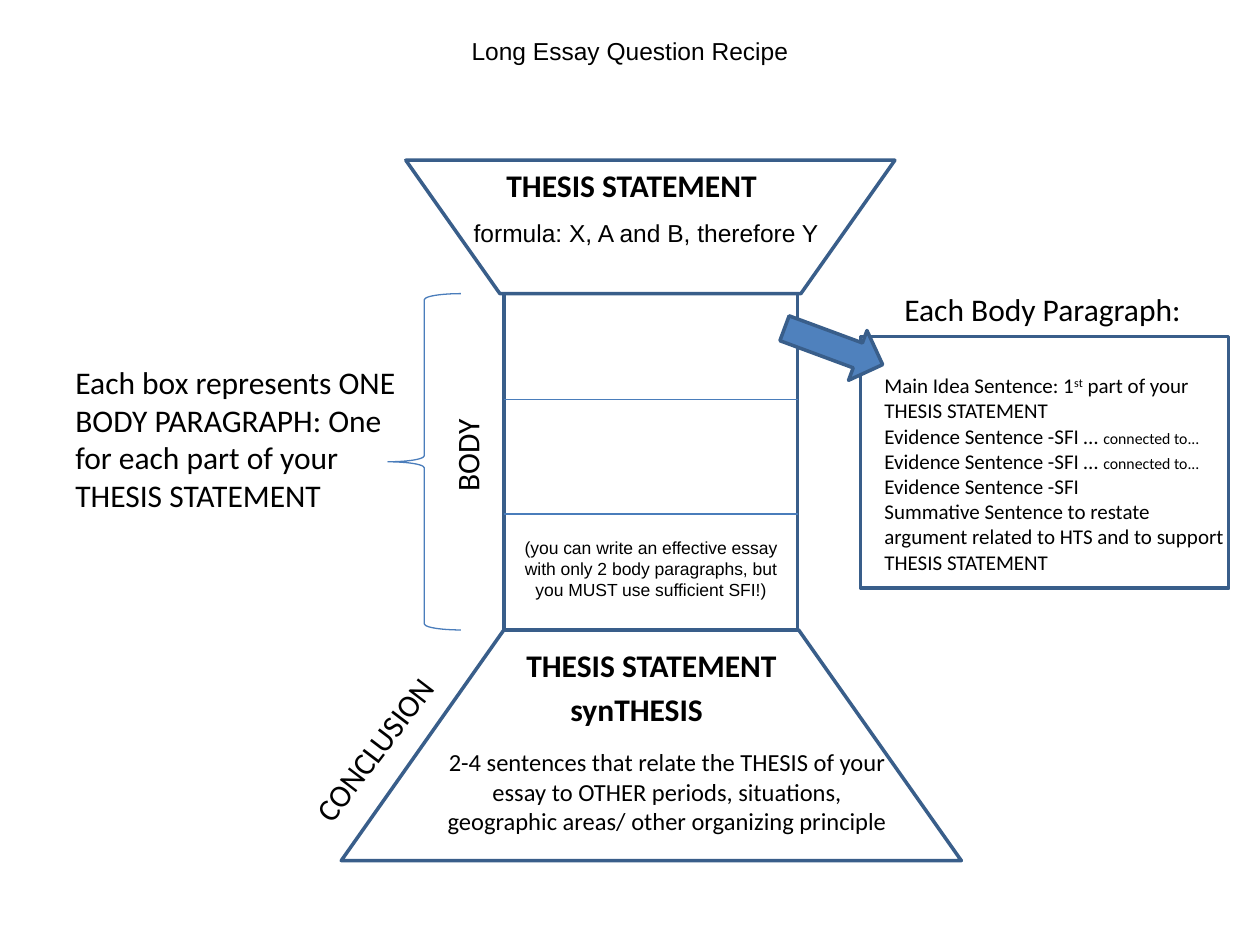
from lxml.etree import SubElement
from pptx import Presentation
from pptx.dml.color import RGBColor
from pptx.enum.shapes import MSO_CONNECTOR, MSO_SHAPE
from pptx.enum.text import MSO_ANCHOR, PP_ALIGN
from pptx.oxml.ns import qn
from pptx.util import Cm, Pt

BLACK = RGBColor(0x00, 0x00, 0x00)
BLUE = RGBColor(0x4F, 0x81, 0xBD)
DARK_BLUE = RGBColor(0x39, 0x5E, 0x8A)
THIN_BLUE = RGBColor(0x4A, 0x7D, 0xBB)

BODY_LEFT, BODY_TOP, BODY_WIDTH, BODY_HEIGHT = 10.16, 5.92, 5.92, 6.78


def style_runs(p, size, font="Calibri", bold=False):
    for r in p.runs:
        r.font.size = Pt(size)
        r.font.name = font
        r.font.bold = bold
        r.font.color.rgb = BLACK


def add_outline(s, kind, left, top, width, height, line=DARK_BLUE, weight=2,
                fill=None, rotation=0, adjustments=()):
    sp = s.shapes.add_shape(kind, Cm(left), Cm(top), Cm(width), Cm(height))
    sp.shadow.inherit = False
    sp.rotation = rotation
    for i, value in enumerate(adjustments):
        sp.adjustments[i] = value
    if fill is None:
        sp.fill.background()
    else:
        sp.fill.solid()
        sp.fill.fore_color.rgb = fill
    sp.line.color.rgb = line
    sp.line.width = Pt(weight)
    return sp


def add_divider(s, y):
    line = s.shapes.add_connector(MSO_CONNECTOR.STRAIGHT, Cm(BODY_LEFT), Cm(y),
                                  Cm(BODY_LEFT + BODY_WIDTH), Cm(y))
    line.line.color.rgb = THIN_BLUE
    line.line.width = Pt(0.75)
    SubElement(line._element.spPr, qn("a:effectLst"))


def add_text(s, text, left, top, width, height, size=18, font="Calibri",
             bold=False, align=PP_ALIGN.LEFT, rotation=0):
    sp = s.shapes.add_textbox(Cm(left), Cm(top), Cm(width), Cm(height))
    sp.rotation = rotation
    tf = sp.text_frame
    tf.word_wrap = True
    tf.text = text
    p = tf.paragraphs[0]
    p.alignment = align
    style_runs(p, size, font, bold)


def add_title(s, text):
    title = s.shapes.title
    title.left, title.top, title.width, title.height = Cm(1.32), Cm(0.6), Cm(22.76), Cm(1.68)
    tf = title.text_frame
    tf.text = text
    tf.vertical_anchor = MSO_ANCHOR.TOP
    p = tf.paragraphs[0]
    p.alignment = PP_ALIGN.CENTER
    style_runs(p, 14, "Arial")


def add_body_note(body, text):
    tf = body.text_frame
    tf.word_wrap = True
    tf.vertical_anchor = MSO_ANCHOR.BOTTOM
    tf.margin_bottom = Cm(0.6)
    tf.text = text
    p = tf.paragraphs[0]
    p.alignment = PP_ALIGN.CENTER
    style_runs(p, 10, "Arial")


def add_paragraph_recipe(s):
    sp = s.shapes.add_textbox(Cm(17.58), Cm(7.39), Cm(7.42), Cm(5.44))
    tf = sp.text_frame
    tf.word_wrap = True
    evidence = ("Evidence Sentence -SFI … ", "connected to...")
    sentences = [
        ("Main Idea Sentence: 1", "st", " part of your THESIS STATEMENT"),
        evidence,
        evidence,
        ("Evidence Sentence -SFI",),
        ("Summative Sentence to restate argument related to HTS and to support THESIS STATEMENT",),
    ]
    for i, parts in enumerate(sentences):
        p = tf.paragraphs[0] if i == 0 else tf.add_paragraph()
        for part in parts:
            p.add_run().text = part
        style_runs(p, 12)
        if parts is evidence:
            p.runs[1].font.size = Pt(9)
    ordinal = tf.paragraphs[0].runs[1]
    ordinal._r.get_or_add_rPr().set("baseline", "30000")


def main():
    prs = Presentation()
    prs.slide_width, prs.slide_height = Cm(25.4), Cm(19.05)
    s = prs.slides.add_slide(prs.slide_layouts[5])
    add_title(s, "Long Essay Question Recipe")

    # Hourglass: introduction, body and conclusion
    add_outline(s, MSO_SHAPE.TRAPEZOID, 8.18, 3.23, 9.86, 2.69,
                rotation=180, adjustments=[0.705])
    add_outline(s, MSO_SHAPE.TRAPEZOID, 6.88, 12.7, 12.5, 4.65, adjustments=[0.705])
    body = add_outline(s, MSO_SHAPE.RECTANGLE, BODY_LEFT, BODY_TOP, BODY_WIDTH, BODY_HEIGHT)
    add_body_note(body, "(you can write an effective essay with only 2 body paragraphs, "
                        "but you MUST use sufficient SFI!)")
    for y in (8.05, 10.36):
        add_divider(s, y)

    add_text(s, "THESIS STATEMENT", 9.96, 3.23, 6.35, 1.02, bold=True)
    add_text(s, "formula: X, A and B, therefore Y", 9.3, 4.27, 7.62, 0.89, 14, "Arial")
    add_text(s, "THESIS STATEMENT", 10.36, 12.9, 5.72, 1.02, bold=True)
    add_text(s, "synTHESIS", 11.25, 13.79, 3.76, 1.02, bold=True)
    add_text(s, "2-4 sentences that relate the THESIS of your essay to OTHER periods, "
                "situations, geographic areas/ other organizing principle",
             8.66, 14.94, 9.58, 2.06, 14, align=PP_ALIGN.CENTER)

    # Labels on the left
    add_outline(s, MSO_SHAPE.LEFT_BRACE, 7.82, BODY_TOP, 1.47, BODY_HEIGHT,
                THIN_BLUE, 0.75, adjustments=[0.083, 0.5])
    add_text(s, "Each box represents ONE BODY PARAGRAPH: One for each part of your "
                "THESIS STATEMENT", 1.27, 7.19, 7.19, 3.33)
    add_text(s, "BODY", 8.36, 8.59, 2.11, 1.02, rotation=270)
    add_text(s, "CONCLUSION", 5.38, 14.22, 4.88, 1.02, rotation=307.2)

    # Detail of one body paragraph
    add_outline(s, MSO_SHAPE.RECTANGLE, 17.35, 6.78, 7.42, 5.08)
    add_paragraph_recipe(s)
    add_text(s, "Each Body Paragraph:", 17.98, 5.72, 6.15, 1.07)
    add_outline(s, MSO_SHAPE.RIGHT_ARROW, 15.75, 6.45, 2.11, 1.07,
                fill=BLUE, rotation=20.3)

    prs.save("out.pptx")


if __name__ == "__main__":
    main()
